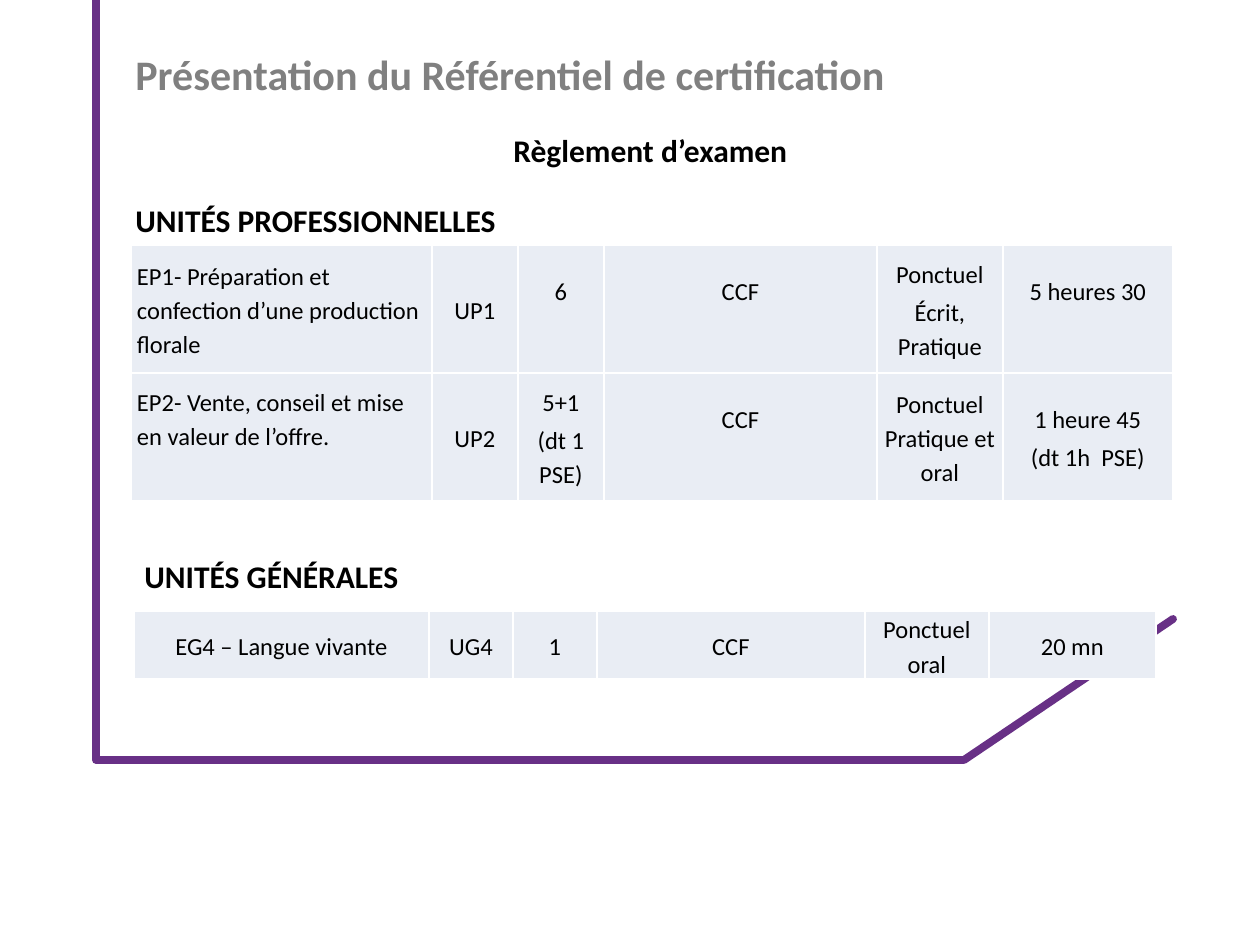
import pptx
import pptx.util
import pptx.dml.color
import pptx.enum.shapes
import pptx.enum.text
import pptx.oxml
import pptx.oxml.ns

PX = 914400 / 126  # EMU per px
MID = pptx.enum.text.PP_ALIGN.CENTER
LEFT = pptx.enum.text.PP_ALIGN.LEFT
NS = pptx.oxml.ns.nsdecls("a")


def emu(*px):
    return [round(n * PX) for n in px]


def hue(code):
    return pptx.dml.color.RGBColor.from_string(code)


deck = pptx.Presentation()
deck.slide_width, deck.slide_height = emu(1260, 945)
slide = deck.slides.add_slide(deck.slide_layouts[6])
shapes = slide.shapes

# Purple frame
for ends in [(96, 760, 963, 760), (964, 760, 1173, 619), (96, 759, 96, 0)]:
    line = shapes.add_connector(pptx.enum.shapes.MSO_CONNECTOR.STRAIGHT, *emu(*ends))
    line.line.color.rgb = hue("683086")
    line.line.width = pptx.util.Pt(4.5)
    line.line._get_or_add_ln().set("cap", "rnd")
    line._element.spPr.append(pptx.oxml.parse_xml(f"<a:effectLst {NS}/>"))

# Title and headings: text, box, size, colour, wrap
heads = [
    ("Présentation du Référentiel de certification", (123, 42, 814, 63), 24, "808080", True),
    ("Règlement d’examen", (501, 125, 301, 50), 18, "000000", False),
    ("UNITÉS PROFESSIONNELLES", (123, 195, 406, 50), 18, "000000", True),
    ("UNITÉS GÉNÉRALES", (132, 551, 282, 50), 18, "000000", False),
]
for text, box, size, color, wrap in heads:
    frame = shapes.add_textbox(*emu(*box)).text_frame
    frame.word_wrap = wrap
    frame.auto_size = pptx.enum.text.MSO_AUTO_SIZE.SHAPE_TO_FIT_TEXT
    frame.text = text
    font = frame.paragraphs[0].font
    font.name, font.size, font.bold = "Calibri", pptx.util.Pt(size), True
    font.color.rgb = hue(color)

# Exam tables: box, column widths, first column alignment, rows
# Each cell is (text, space kept free below it)
GAP = 38
tables = [
    ((131, 245, 1042, 256), (301, 86, 86, 273, 126, 170), LEFT, [
        [("EP1- Préparation et confection d’une production florale", 0), ("UP1", 0),
         ("6", GAP), ("CCF", GAP), ("Ponctuel\nÉcrit, Pratique", 0), ("5 heures 30", GAP)],
        [("EP2- Vente, conseil et mise en valeur de l’offre.", GAP), ("UP2", 0),
         ("5+1\n(dt 1 PSE)", 0), ("CCF", GAP), ("Ponctuel Pratique et oral", 0),
         ("1 heure 45\n(dt 1h  PSE)", 0)],
    ]),
    ((134, 611, 1022, 68), (295, 84, 84, 268, 124, 167), MID, [
        [("EG4 – Langue vivante", 0), ("UG4", 0), ("1", 0), ("CCF", 0),
         ("Ponctuel oral", 0), ("20 mn", 0)],
    ]),
]
for box, widths, first, rows in tables:
    grid = shapes.add_table(len(rows), len(widths), *emu(*box)).table
    grid.first_row = grid.horz_banding = False
    for col, width in zip(grid.columns, emu(*widths)):
        col.width = width
    for r, row in enumerate(rows):
        for c, (text, gap) in enumerate(row):
            cell = grid.cell(r, c)
            cell.margin_left, cell.margin_right = emu(6, 6)
            cell.margin_top, cell.margin_bottom = emu(0, gap)
            cell.vertical_anchor = pptx.enum.text.MSO_ANCHOR.MIDDLE
            # White borders go before the fill
            props = cell._tc.get_or_add_tcPr()
            for side in ("lnL", "lnR", "lnT", "lnB"):
                props.append(pptx.oxml.parse_xml(
                    f'<a:{side} {NS} w="12700"><a:solidFill><a:srgbClr val="FFFFFF"/>'
                    f"</a:solidFill></a:{side}>"))
            cell.fill.solid()
            cell.fill.fore_color.rgb = hue("E9EDF4")
            cell.text = text
            for para in cell.text_frame.paragraphs:
                para.alignment = MID if c else first
                para.line_spacing = 1.15
                para.space_before = para.space_after = pptx.util.Pt(1)
                para.font.name, para.font.size = "Calibri", pptx.util.Pt(14)
                para.font.color.rgb = hue("000000")

deck.save("out.pptx")
